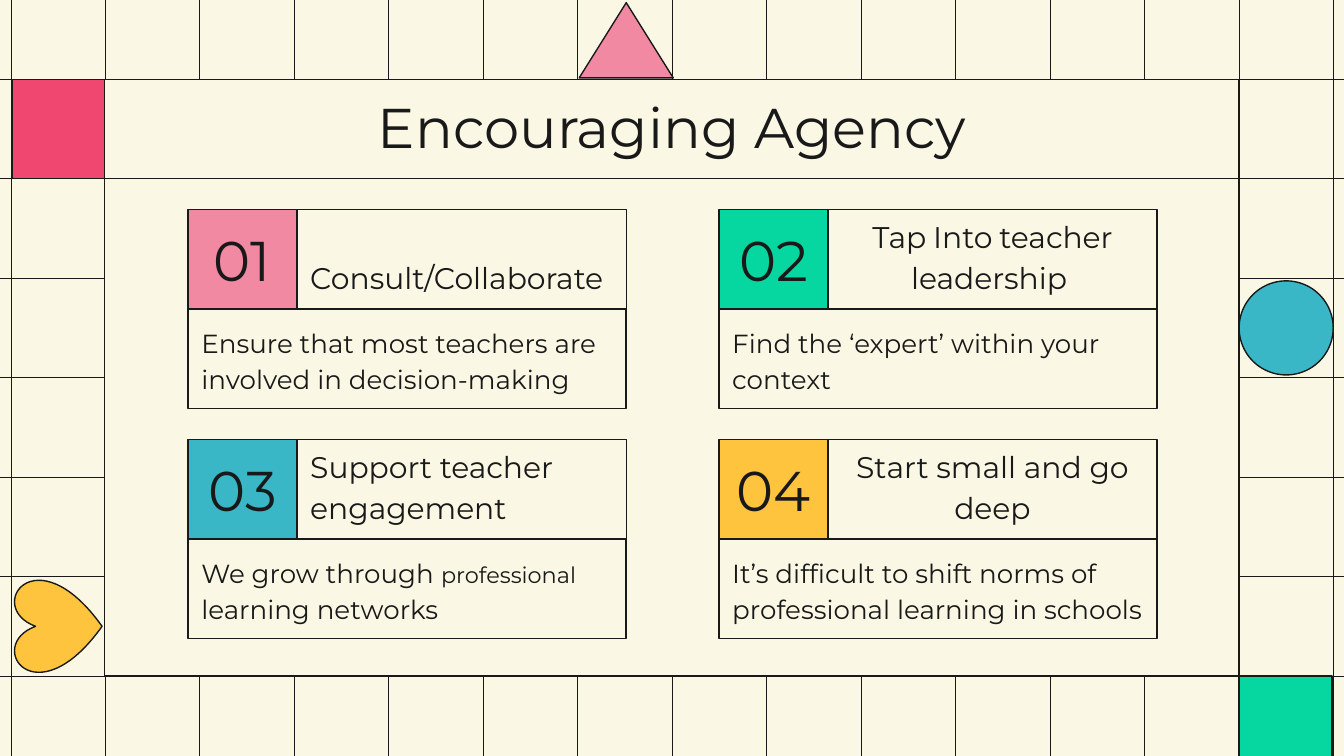
from dataclasses import dataclass

from lxml import etree
from pptx import Presentation
from pptx.dml.color import RGBColor
from pptx.enum.shapes import MSO_CONNECTOR as Connector, MSO_SHAPE as Preset
from pptx.enum.text import MSO_ANCHOR as Anchor, PP_ALIGN as Align
from pptx.oxml.ns import qn
from pptx.util import Inches, Pt

# A 16:9 slide
WIDTH = 10
HEIGHT = WIDTH * 9 / 16
INK, CREAM = "191919", "FAF8E4"
PINK, GREEN, BLUE, YELLOW, RED = "F289A3", "06D6A0", "39B7C7", "FFC43D", "EF476F"
FONT = "Montserrat"

# Background grid and the panel that covers its middle
GRID_LEFT, GRID_TOP = 0.08, 0.59
GRID_COLUMNS, GRID_ROWS = 14, 6
COLUMN_STEP = (WIDTH - 2 * GRID_LEFT) / GRID_COLUMNS
ROW = 0.74
PANEL_LEFT, PANEL_WIDTH = 0.78, 8.44

# Cards: number and heading on top, body below
CARD_LEFTS, CARD_TOPS = (1.4, 5.35), (1.56, 3.27)
CARD_WIDTH, NUMBER_WIDTH = 3.26, 0.81

Runs = list[tuple[str, int]]


@dataclass
class Box:
    left: float
    top: float
    width: float
    height: float
    fill: str
    preset: Preset = Preset.RECTANGLE
    rotation: float = 0


@dataclass
class Card:
    heading: Runs
    body: Runs
    fill: str


DECORATIONS = [
    Box(PANEL_LEFT, GRID_TOP, PANEL_WIDTH, GRID_ROWS * ROW, CREAM),
    Box(0.09, GRID_TOP, 0.69, ROW, RED),
    Box(9.22, 5.03, 0.69, ROW, GREEN),
    Box(4.31, 0.02, 0.7, 0.56, PINK, Preset.ISOSCELES_TRIANGLE),
    Box(9.22, 2.09, 0.7, 0.7, BLUE, Preset.OVAL),
    Box(0.09, 4.33, 0.68, 0.66, YELLOW, Preset.HEART, 270),
]

CARDS = [
    Card([("Consult/Collaborate", 16)],
         [("Ensure that most teachers are involved in decision-making", 14)], PINK),
    # The spaces of this heading are smaller than its words
    Card([run for word in ("Tap", "Into", "teacher", "leadership")
          for run in ((word, 16), (" ", 14))],
         [("Find the ‘expert’ within your context", 14)], GREEN),
    Card([("Support teacher engagement", 16)],
         [("We grow through ", 14), ("professional", 12), (" learning networks", 14)], BLUE),
    Card([("Start small and go deep", 16)],
         [("It’s difficult to shift norms of professional learning in schools", 14)], YELLOW),
]


def color(value: str) -> RGBColor:
    return RGBColor.from_string(value)


def draw_line(slide, x1: float, y1: float, x2: float, y2: float) -> None:
    line = slide.shapes.add_connector(
        Connector.STRAIGHT, Inches(x1), Inches(y1), Inches(x2), Inches(y2))
    line.line.color.rgb = color(INK)
    line.line.width = Pt(0.25)
    etree.SubElement(line._element.spPr, qn("a:effectLst"))


def draw_box(slide, box: Box):
    shape = slide.shapes.add_shape(
        box.preset, Inches(box.left), Inches(box.top), Inches(box.width), Inches(box.height))
    shape.rotation = box.rotation
    shape.shadow.inherit = False
    shape.fill.solid()
    shape.fill.fore_color.rgb = color(box.fill)
    shape.line.color.rgb = color(INK)
    shape.line.width = Pt(0.75)
    return shape


def draw_text_box(slide, box: Box, runs: Runs, align: Align, anchor: Anchor,
                  line_spacing: float = 1.15) -> None:
    frame = draw_box(slide, box).text_frame
    frame.word_wrap = True
    frame.vertical_anchor = anchor
    frame.margin_left = frame.margin_right = Inches(0.1)
    frame.margin_top = frame.margin_bottom = Inches(0.1)
    paragraph = frame.paragraphs[0]
    paragraph.alignment = align
    paragraph.line_spacing = line_spacing
    for text, size in runs:
        run = paragraph.add_run()
        run.text = text
        run.font.name = FONT
        run.font.size = Pt(size)
        run.font.color.rgb = color(INK)


def draw_card(slide, index: int, card: Card) -> None:
    row, column = divmod(index, 2)
    left, top = CARD_LEFTS[column], CARD_TOPS[row]
    draw_text_box(slide, Box(left, top + ROW, CARD_WIDTH, ROW, CREAM),
                  card.body, Align.LEFT, Anchor.TOP)
    draw_text_box(slide, Box(left, top, NUMBER_WIDTH, ROW, card.fill),
                  [(f"{index + 1:02}", 30)], Align.CENTER, Anchor.MIDDLE, 1.0)
    # Headings are centred in the right column only
    heading_box = Box(left + NUMBER_WIDTH, top, CARD_WIDTH - NUMBER_WIDTH, ROW, CREAM)
    draw_text_box(slide, heading_box, card.heading,
                  Align.CENTER if column else Align.LEFT, Anchor.BOTTOM)


def main() -> None:
    presentation = Presentation()
    presentation.slide_width = Inches(WIDTH)
    presentation.slide_height = Inches(HEIGHT)
    slide = presentation.slides.add_slide(presentation.slide_layouts[6])
    slide.background.fill.solid()
    slide.background.fill.fore_color.rgb = color(CREAM)

    # Grid
    for row in range(GRID_ROWS + 1):
        y = GRID_TOP + row * ROW
        draw_line(slide, 0, y, WIDTH, y)
    for column in range(GRID_COLUMNS + 1):
        x = GRID_LEFT + column * COLUMN_STEP
        draw_line(slide, x, 0, x, HEIGHT)

    # Panel and ornaments
    for decoration in DECORATIONS:
        draw_box(slide, decoration)

    # Title bar
    draw_text_box(slide, Box(PANEL_LEFT, GRID_TOP, PANEL_WIDTH, ROW, CREAM),
                  [("Encouraging Agency", 30)], Align.CENTER, Anchor.TOP, 1.0)

    # Cards
    for index, card in enumerate(CARDS):
        draw_card(slide, index, card)

    presentation.save("out.pptx")


if __name__ == "__main__":
    main()
